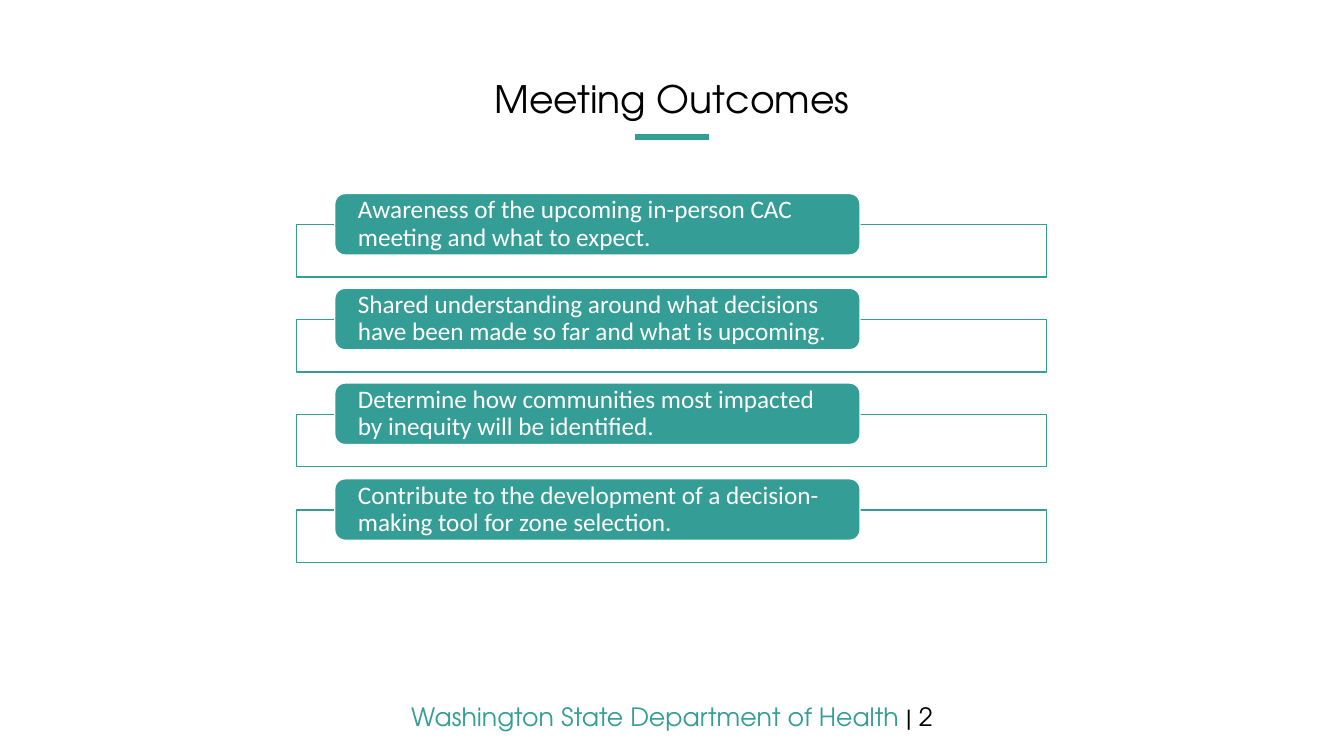
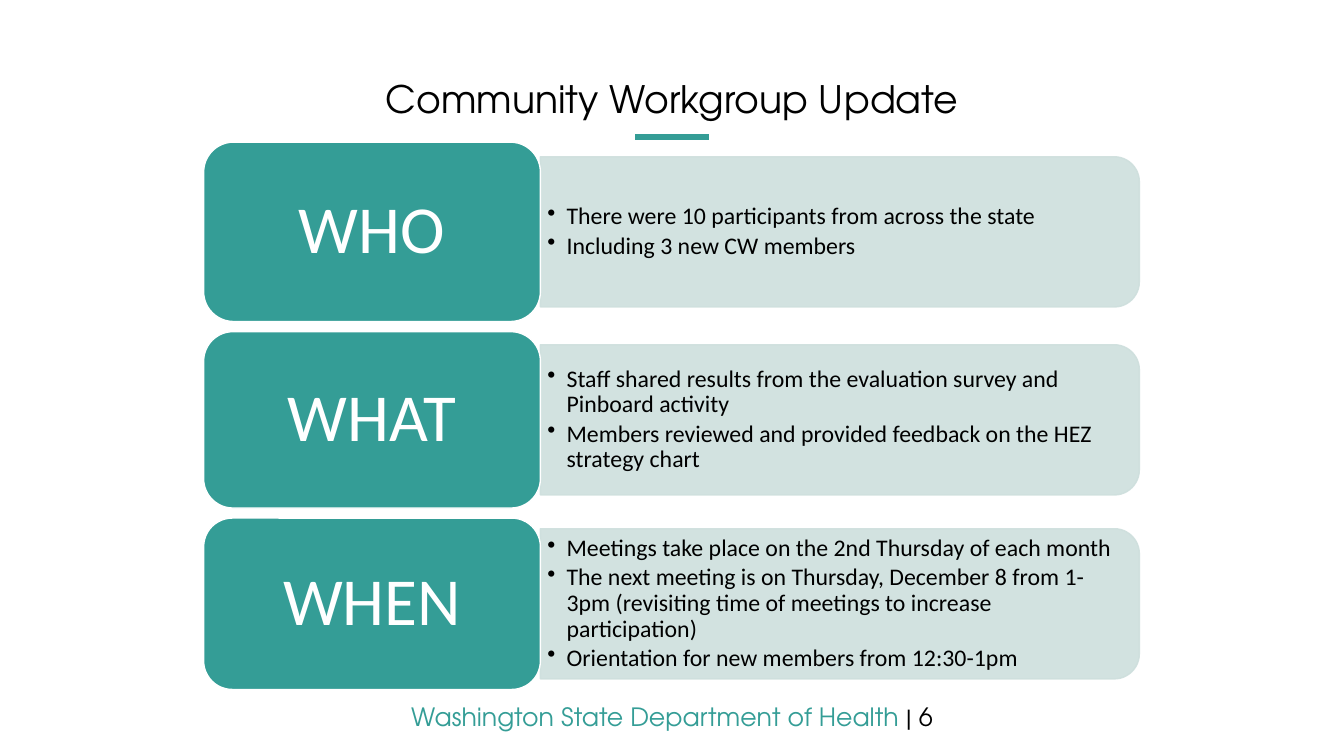
from lxml.etree import SubElement
from pptx import Presentation
from pptx.dml.color import RGBColor
from pptx.enum.shapes import MSO_CONNECTOR, MSO_SHAPE
from pptx.enum.text import MSO_ANCHOR, PP_ALIGN
from pptx.oxml.ns import qn
from pptx.util import Emu, Pt

EMU_PER_PX = 9144
PAGE_WIDTH, PAGE_HEIGHT = 1333, 750

TEAL = "349D96"
PALE_TEAL = "CEDFDD"
WHITE = "FFFFFF"
BLACK = "000000"

HEADING_FONT = "TeX Gyre Adventor"
BODY_FONT = "Calibri"
TITLE = {"name": HEADING_FONT, "size": Pt(27)}
FOOTER = {"name": HEADING_FONT, "size": Pt(18)}
OUTCOME = {"name": BODY_FONT, "size": Pt(18)}
TOPIC = {"name": BODY_FONT, "size": Pt(48)}
DETAIL = {"name": BODY_FONT, "size": Pt(17)}

ORGANISATION = "Washington State Department of Health "

OUTCOMES = [
    "Awareness of the upcoming in-person CAC meeting and what to expect.",
    "Shared understanding around what decisions have been made so far and what is upcoming.",
    "Determine how communities most impacted by inequity will be identified.",
    "Contribute to the development of a decision-making tool for zone selection.",
]

# Topic, tile height, details
TOPICS = [
    ("WHO", 178, [
        "There were 10 participants from across the state",
        "Including 3 new CW members",
    ]),
    ("WHAT", 175, [
        "Staff shared results from the evaluation survey and Pinboard activity",
        "Members reviewed and provided feedback on the HEZ strategy chart",
    ]),
    ("WHEN", 170, [
        "Meetings take place on the 2nd Thursday of each month",
        "The next meeting is on Thursday, December 8 from 1-3pm "
        "(revisiting time of meetings to increase participation)",
        "Orientation for new members from 12:30-1pm",
    ]),
]


def px(length):
    return Emu(round(length * EMU_PER_PX))


def rgb(color):
    return RGBColor.from_string(color)


def add_span(para, text, font_style, color):
    span = para.add_run()
    span.text = text
    for name, value in font_style.items():
        setattr(span.font, name, value)
    span.font.color.rgb = rgb(color)


def set_frame(box, side=10, end=5, anchor=MSO_ANCHOR.MIDDLE):
    """Wrap the text of a box, with margins at the sides and at both ends."""
    settings = {
        "word_wrap": True, "vertical_anchor": anchor,
        "margin_left": px(side), "margin_right": px(side),
        "margin_top": px(end), "margin_bottom": px(end),
    }
    for name, value in settings.items():
        setattr(box.text_frame, name, value)
    return box.text_frame


def add_text_box(page, left, top, width, height):
    return page.shapes.add_textbox(px(left), px(top), px(width), px(height))


def add_block(page, kind, left, top, width, height, fill, line):
    block = page.shapes.add_shape(kind, px(left), px(top), px(width), px(height))
    block.shadow.inherit = False
    block.fill.solid()
    block.fill.fore_color.rgb = rgb(fill)
    block.line.color.rgb = rgb(line)
    block.line.width = Pt(1)
    return block


def add_tile(page, left, top, width, height, text, font_style, align, end):
    """Add a teal rounded tile holding one white paragraph."""
    tile = add_block(page, MSO_SHAPE.ROUNDED_RECTANGLE,
                     left, top, width, height, TEAL, WHITE)
    para = set_frame(tile, side=20, end=end).paragraphs[0]
    para.alignment = align
    para.line_spacing = 0.9
    add_span(para, text, font_style, WHITE)


def add_panel(page, left, top, width, height):
    """Add a translucent panel rounded on its right side only."""
    # The preset is rounded at the top, so it is drawn upright and turned.
    shift = (width - height) / 2
    panel = add_block(page, MSO_SHAPE.ROUND_2_SAME_RECTANGLE,
                      left + shift, top - shift, height, width,
                      PALE_TEAL, PALE_TEAL)
    panel.rotation = 90
    for color in panel.element.spPr.iter(qn("a:srgbClr")):
        SubElement(color, qn("a:alpha"), val="90000")


def add_bullets(page, left, top, width, height, lines):
    box = add_text_box(page, left, top, width, height)
    frame = set_frame(box, side=7, end=4)
    for number, line in enumerate(lines):
        para = frame.add_paragraph() if number else frame.paragraphs[0]
        para.alignment = PP_ALIGN.LEFT
        para.line_spacing = 0.9
        para.space_after = Pt(2.5)
        properties = para._p.get_or_add_pPr()
        properties.set("marL", str(px(19)))
        properties.set("indent", str(px(-19)))
        SubElement(properties, qn("a:buChar"), char="•")
        add_span(para, line, DETAIL, BLACK)


def add_page(deck, title, number):
    """Add a blank page with the shared title, rule and footer."""
    page = deck.slides.add_slide(deck.slide_layouts[6])

    rule = page.shapes.add_connector(
        MSO_CONNECTOR.STRAIGHT, px(630), px(136), px(703), px(136))
    rule.line.color.rgb = rgb(TEAL)
    rule.line.width = Pt(4)
    SubElement(rule.element.spPr, qn("a:effectLst"))

    footer = add_text_box(page, 0, 691, PAGE_WIDTH, 40)
    para = set_frame(footer, anchor=MSO_ANCHOR.TOP).paragraphs[0]
    para.alignment = PP_ALIGN.CENTER
    add_span(para, ORGANISATION, FOOTER, TEAL)
    add_span(para, f"| {number}", FOOTER, BLACK)

    heading = add_text_box(page, 0, 74, PAGE_WIDTH, 53)
    para = set_frame(heading).paragraphs[0]
    para.alignment = PP_ALIGN.CENTER
    para.line_spacing = 0.9
    add_span(para, title, TITLE, BLACK)
    return page


def add_outcomes(page):
    for row, outcome in enumerate(OUTCOMES):
        top = 223 + row * 283 // 3
        add_block(page, MSO_SHAPE.RECTANGLE, 294, top, 744, 52, WHITE, TEAL)
        add_tile(page, 332, top - 31, 521, 61, outcome, OUTCOME,
                 PP_ALIGN.LEFT, end=0)


def add_topics(page):
    tile_left, tile_width, gap = 202, 334, 10
    panel_left = tile_left + tile_width
    panel_height, text_height = 149, 134
    top = 141
    for topic, height, details in TOPICS:
        middle = top + height / 2
        add_panel(page, panel_left, middle - panel_height / 2, 594, panel_height)
        add_bullets(page, panel_left, middle - text_height / 2, 587, text_height,
                    details)
        add_tile(page, tile_left, top, tile_width, height, topic, TOPIC,
                 PP_ALIGN.CENTER, end=10)
        top += height + gap


def main():
    deck = Presentation()
    deck.slide_width, deck.slide_height = px(PAGE_WIDTH), px(PAGE_HEIGHT)
    add_outcomes(add_page(deck, "Meeting Outcomes", 2))
    add_topics(add_page(deck, "Community Workgroup Update", 6))
    deck.save("out.pptx")


if __name__ == "__main__":
    main()
